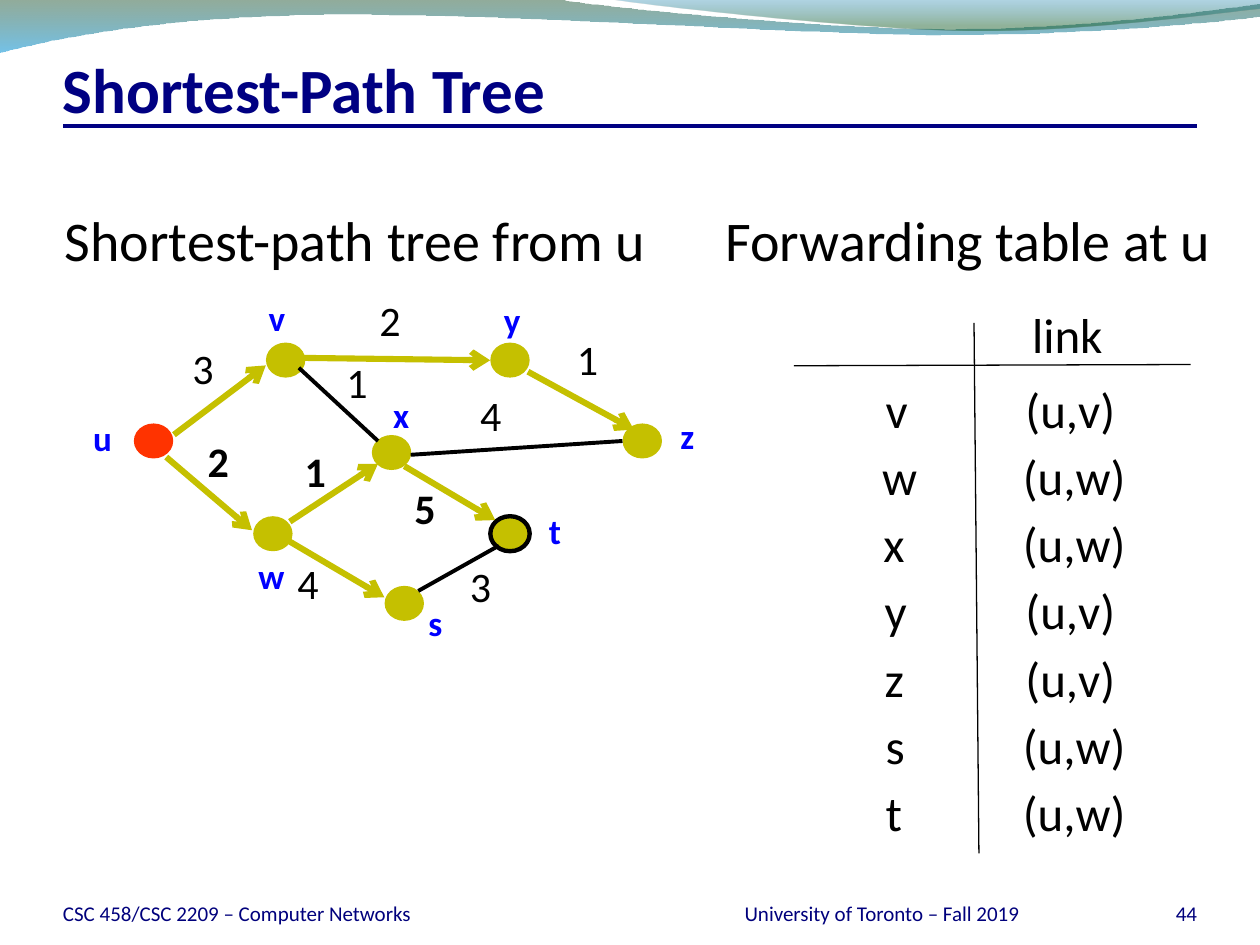
from dataclasses import dataclass
from typing import NamedTuple

from lxml import etree
from pptx import Presentation
from pptx.dml.color import RGBColor
from pptx.enum.shapes import MSO_CONNECTOR, MSO_SHAPE
from pptx.enum.text import MSO_ANCHOR, MSO_AUTO_SIZE, PP_ALIGN
from pptx.oxml.ns import qn
from pptx.util import Pt

LINE = MSO_CONNECTOR.STRAIGHT
OVAL = MSO_SHAPE.OVAL
TOP, BOTTOM = MSO_ANCHOR.TOP, MSO_ANCHOR.BOTTOM
LEFT, MID, RIGHT = PP_ALIGN.LEFT, PP_ALIGN.CENTER, PP_ALIGN.RIGHT
GROW = MSO_AUTO_SIZE.SHAPE_TO_FIT_TEXT


@dataclass(frozen=True)
class Theme:
    font: str = "Calibri"
    navy: str = "000082"
    foot: str = "00007C"
    ink: str = "000000"
    blue: str = "0000FF"
    root: str = "FF3300"
    tree: str = "C5C000"
    title: float = 36
    head: float = 32
    row: float = 28
    cost: float = 24
    name: float = 20
    small: float = 12


class Node(NamedTuple):
    name: str
    x: float
    y: float
    tag_x: float
    tag_y: float
    tag_w: float


class Edge(NamedTuple):
    start: tuple[float, float]
    end: tuple[float, float]
    cost: str
    cost_x: float
    cost_y: float
    tree: bool = True
    bold: bool = False


class Route(NamedTuple):
    dest: str
    x: float
    width: float
    link: str


class Stop(NamedTuple):
    at: float
    color: str
    alpha: int


class Wave(NamedTuple):
    start: tuple[float, float]
    steps: list[tuple[float, ...]]
    stops: list[Stop]


THEME = Theme()
NODE_W, NODE_H = 22.5, 20
ROW_TOP, ROW_GAP, ROW_H = 213.1, 38.43, 41
LINK_BOX = {"v": (578.9, 65.5), "w": (577.4, 73.4)}

NODES = [
    Node("u", 76.5, 242, 46.1, 234.7, 25),
    Node("w", 144.7, 295, 140.4, 313.2, 29.5),
    Node("v", 152, 195.8, 146.4, 166, 23.8),
    Node("x", 212.5, 248.6, 217.4, 221.2, 23.8),
    Node("t", 280.2, 295, 306.4, 287.8, 21.6),
    Node("y", 280.2, 195.8, 280.8, 167, 23.8),
    Node("s", 219.8, 334.8, 237.6, 340.4, 22.3),
    Node("z", 355.8, 242, 381.6, 233.3, 22.3),
]
EDGES = [
    Edge((99.4, 248.4), (151.9, 208.8), "3", 102.8, 192.2),
    Edge((95, 261.2), (144, 303), "2", 111.6, 245.5, bold=True),
    Edge((170.8, 210.2), (216, 252), "1", 190.8, 200.2, tree=False),
    Edge((163.4, 308.2), (219.6, 341.3), "4", 162.9, 314.8),
    Edge((165.6, 298.1), (216, 265), "1", 167, 250.8, bold=True),
    Edge((231.1, 266.4), (283, 297.2), "5", 229.7, 272.2, bold=True),
    Edge((239, 337.7), (285.1, 311.8), "3", 261.4, 316.8, tree=False),
    Edge((234.7, 259.9), (355.7, 252), "4", 267.3, 218.9, tree=False),
    Edge((172.1, 204.5), (280.1, 205.9), "2", 209.7, 164.9),
    Edge((301.7, 212.4), (362.2, 245.5), "1", 322.6, 187.2),
]
ROUTES = [
    Route("v", 499, 27.4, "v"),
    Route("w", 497, 34.6, "w"),
    Route("x", 497.7, 26.6, "w"),
    Route("y", 498.4, 27.4, "v"),
    Route("z", 498.4, 25.2, "v"),
    Route("s", 499, 25.2, "w"),
    Route("t", 499, 23.8, "w"),
]
WAVES = [
    Wave((0, -0.7), [
        (316.8, -0.7),
        (342.7, 4.3, 478.1, 16.6, 545.8, 16.6),
        (614.2, 16.6, 689.8, 6.5, 720, 2.2),
        (720.7, 9.4),
        (707.8, 11.5, 626.4, 20.2, 537.1, 20.2),
        (447.8, 19.4, 275, 7.2, 185, 8.6),
        (92.9, 9.4, 33.1, 21.6, -0.7, 30.2),
        (0, -0.7),
    ], [Stop(0, "0F461E", 45), Stop(1, "0090D6", 55)]),
    Wave((344.9, -0.7), [
        (366.5, 2.9, 491, 16.6, 553.7, 17.3),
        (616.3, 18, 691.9, 7.9, 720, 5),
        (720, -0.7),
        (344.9, -0.7),
    ], [Stop(0, "0076AF", 30), Stop(0.8, "0D5821", 45)]),
]


def rgb(color: str) -> RGBColor:
    return RGBColor.from_string(color)


def bend(shape, steps: list[tuple[float, ...]]) -> None:
    legs = iter(list(shape._element.iter(qn("a:lnTo"))))
    for step in steps:
        leg = next(legs)
        if len(step) == 6:
            leg.tag = qn("a:cubicBezTo")
            for _ in range(2):
                extra = next(legs)
                leg.append(extra[0])
                extra.getparent().remove(extra)


def draw_wave(shapes, wave: Wave) -> None:
    spots = [tuple(map(Pt, step[i:i + 2]))
             for step in wave.steps for i in range(0, len(step), 2)]
    pen = shapes.build_freeform(*map(Pt, wave.start))
    pen.add_line_segments(spots, close=True)
    shape = pen.convert_to_shape()
    bend(shape, wave.steps)
    shape.shadow.inherit = False
    shape.line.fill.background()
    shape.fill.gradient()
    shape.fill.gradient_angle = 270
    for mark, stop in zip(shape.fill.gradient_stops, wave.stops):
        mark.position = stop.at
        mark.color.rgb = rgb(stop.color)
    tints = shape._element.spPr.iter(qn("a:srgbClr"))
    for tint, stop in zip(tints, wave.stops):
        etree.SubElement(tint, qn("a:alpha"), val=str(stop.alpha * 1000))


def draw_line(shapes, start: tuple[float, float], end: tuple[float, float],
              color: str, width: float, arrow: bool = False) -> None:
    line = shapes.add_connector(LINE, *map(Pt, (*start, *end)))
    line.line.color.rgb = rgb(color)
    line.line.width = Pt(width)
    if arrow:
        etree.SubElement(line.line._get_or_add_ln(), qn("a:tailEnd"), type="arrow")
    etree.SubElement(line._element.spPr, qn("a:effectLst"))


def draw_text(shapes, text: str, box: tuple[float, ...], size: float,
              color: str = THEME.ink, bold: bool = False, align=LEFT,
              anchor=TOP, inset: tuple[float, ...] = (7.2, 3.6, 7.2, 3.6),
              wrap: bool = False, before: float = 0) -> None:
    frame = shapes.add_textbox(*map(Pt, box)).text_frame
    frame.word_wrap = wrap
    if not wrap:
        frame.auto_size = GROW
    frame.vertical_anchor = anchor
    (frame.margin_left, frame.margin_top,
     frame.margin_right, frame.margin_bottom) = map(Pt, inset)
    para = frame.paragraphs[0]
    para.alignment = align
    para.space_before = Pt(before)
    run = para.add_run()
    run.text = text
    run.font.name = THEME.font
    run.font.size = Pt(size)
    run.font.bold = bold
    run.font.color.rgb = rgb(color)


def draw_node(shapes, node: Node) -> None:
    oval = shapes.add_shape(OVAL, *map(Pt, (node.x, node.y, NODE_W, NODE_H)))
    oval.shadow.inherit = False
    oval.fill.solid()
    oval.fill.fore_color.rgb = rgb(THEME.root if node.name == "u" else THEME.tree)
    if node.name == "t":
        oval.line.color.rgb = rgb(THEME.ink)
        oval.line.width = Pt(2.5)
    else:
        oval.line.fill.background()


def draw_graph(shapes) -> None:
    for node in NODES:
        draw_node(shapes, node)
    for edge in EDGES:
        color, width = (THEME.tree, 3.5) if edge.tree else (THEME.ink, 2.25)
        draw_line(shapes, edge.start, edge.end, color, width, edge.tree)
    for edge in EDGES:
        draw_text(shapes, edge.cost, (edge.cost_x, edge.cost_y, 26.6, 36),
                  THEME.cost, bold=edge.bold)
    for node in NODES:
        draw_text(shapes, node.name, (node.tag_x, node.tag_y, node.tag_w, 31),
                  THEME.name, THEME.blue, True, MID)


def draw_routes(shapes) -> None:
    draw_line(shapes, (556.6, 184.5), (559.4, 487.6), THEME.ink, 0.75)
    draw_line(shapes, (453.6, 209), (680.4, 208.3), THEME.ink, 0.75)
    draw_text(shapes, "link", (582.7, 170.6, 54.7, ROW_H), THEME.row)
    for i, route in enumerate(ROUTES):
        group = shapes.add_group_shape().shapes
        cells = [(route.dest, route.x, route.width),
                 (f"(u,{route.link})", *LINK_BOX[route.link])]
        for text, x, width in cells:
            draw_text(group, text, (x, ROW_TOP + i * ROW_GAP, width, ROW_H), THEME.row)


def draw_frame(shapes) -> None:
    for wave in WAVES:
        draw_wave(shapes, wave)
    draw_line(shapes, (36, 72), (684, 72), THEME.navy, 2.25)
    for text, x, width, align in [
        ("CSC 458/CSC 2209 – Computer Networks", 36, 347.8, LEFT),
        ("44", 624, 60, RIGHT),
        ("University of Toronto – Fall 2019", 390, 228, MID),
    ]:
        draw_text(shapes, text, (x, 500.4, width, 28.8), THEME.small, THEME.foot,
                  align=align, anchor=BOTTOM, inset=(0, 0, 0, 0), wrap=True)
    draw_text(shapes, "Shortest-Path Tree", (36, 24, 648, 48), THEME.title,
              THEME.navy, True, anchor=BOTTOM, inset=(0, 3.6, 0, 0), wrap=True)
    for text, x, width in [("Shortest-path tree from u", 30, 356.4),
                           ("Forwarding table at u", 407.5, 312.5)]:
        draw_text(shapes, text, (x, 113.8, width, 378), THEME.head,
                  wrap=True, before=6.4)


def main() -> None:
    deck = Presentation()
    deck.slide_width, deck.slide_height = Pt(720), Pt(540)
    shapes = deck.slides.add_slide(deck.slide_layouts[6]).shapes
    draw_frame(shapes)
    draw_graph(shapes.add_group_shape().shapes)
    draw_routes(shapes)
    deck.save("out.pptx")


if __name__ == "__main__":
    main()
